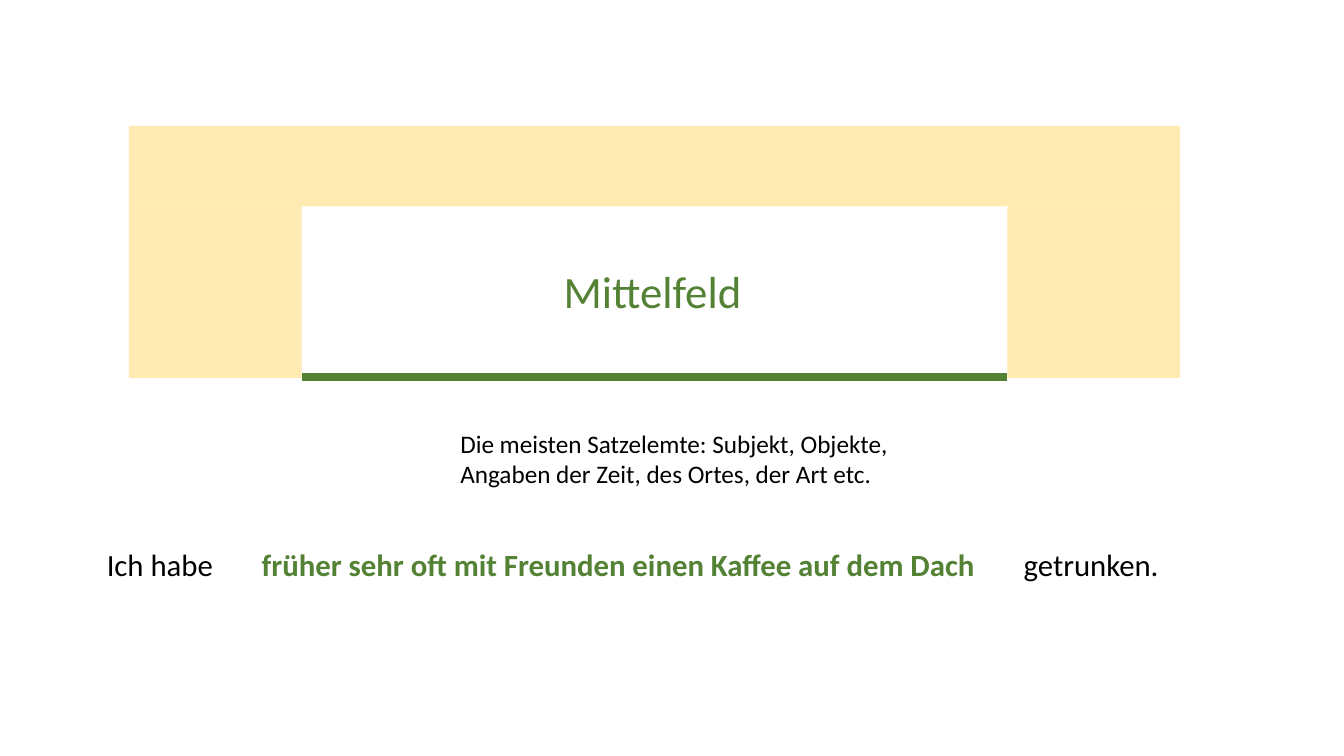
"""Build the slide that explains the Mittelfeld of a German sentence."""
from lxml.etree import SubElement
from pptx import Presentation
from pptx.dml.color import RGBColor as RGB
from pptx.enum.shapes import MSO_CONNECTOR as LINK, MSO_SHAPE as SHAPE
from pptx.oxml.ns import qn
from pptx.util import Pt

GREEN, BLACK, GOLD = "548235", "000000", "FFC000"
FONT = "Calibri"
ALPHA = 30
LEFT, TOP, WIDTH = 92, 90, 751
BAR, SIDE, LEG = 57.5, 123.5, 122.5

TITLE = [[("Mittelfeld", GREEN, False)]]
NOTE = [
    [("Die meisten Satzelemte: Subjekt, Objekte,", BLACK, False)],
    [("Angaben der Zeit, des Ortes, der Art etc.", BLACK, False)],
]
PHRASE = [[
    ("Ich habe\t", BLACK, False),
    ("früher sehr oft mit Freunden einen Kaffee auf dem Dach\t", GREEN, True),
    ("getrunken.", BLACK, False),
]]
TEXTS = [
    (TITLE, 32, (395.5, 185, 143.5, 46), ()),
    (NOTE, 18, (321.7, 302.5, 327.5, 51), ()),
    (PHRASE, 22, (69.2, 386, 781, 34), (110.7, 655)),
]


def paint(color, code):
    color.rgb = RGB.from_string(code)


def add_band(slide, box):
    band = slide.shapes.add_shape(SHAPE.RECTANGLE, *map(Pt, box))
    band.shadow.inherit = False
    band.fill.solid()
    paint(band.fill.fore_color, GOLD)
    band.line.fill.background()
    tint = band._element.spPr.find(qn("a:solidFill"))[0]
    SubElement(tint, qn("a:alpha"), val=str(ALPHA * 1000))


def add_rule(slide, start, end, y):
    rule = slide.shapes.add_connector(LINK.STRAIGHT, Pt(start), Pt(y), Pt(end), Pt(y))
    paint(rule.line.color, GREEN)
    rule.line.width = Pt(6)
    SubElement(rule._element.spPr, qn("a:effectLst"))


def add_text(slide, lines, size, box, tabs):
    frame = slide.shapes.add_textbox(*map(Pt, box)).text_frame
    frame.word_wrap = True
    for i, line in enumerate(lines):
        para = frame.add_paragraph() if i else frame.paragraphs[0]
        if tabs:
            stops = SubElement(para._p.get_or_add_pPr(), qn("a:tabLst"))
            for tab in tabs:
                SubElement(stops, qn("a:tab"), pos=str(Pt(tab)), algn="l")
        for words, code, bold in line:
            run = para.add_run()
            run.text = words
            run.font.name, run.font.size, run.font.bold = FONT, Pt(size), bold
            paint(run.font.color, code)


def main():
    deck = Presentation()
    deck.slide_width, deck.slide_height = Pt(960), Pt(540)
    slide = deck.slides.add_slide(deck.slide_layouts[6])
    inner, outer = LEFT + SIDE, LEFT + WIDTH - SIDE
    for x in (LEFT, outer):
        add_band(slide, (x, TOP + BAR, SIDE, LEG))
    add_band(slide, (LEFT, TOP, WIDTH, BAR))
    add_rule(slide, inner, outer, TOP + BAR + LEG - 0.7)
    for text in TEXTS:
        add_text(slide, *text)
    deck.save("out.pptx")


if __name__ == "__main__":
    main()
